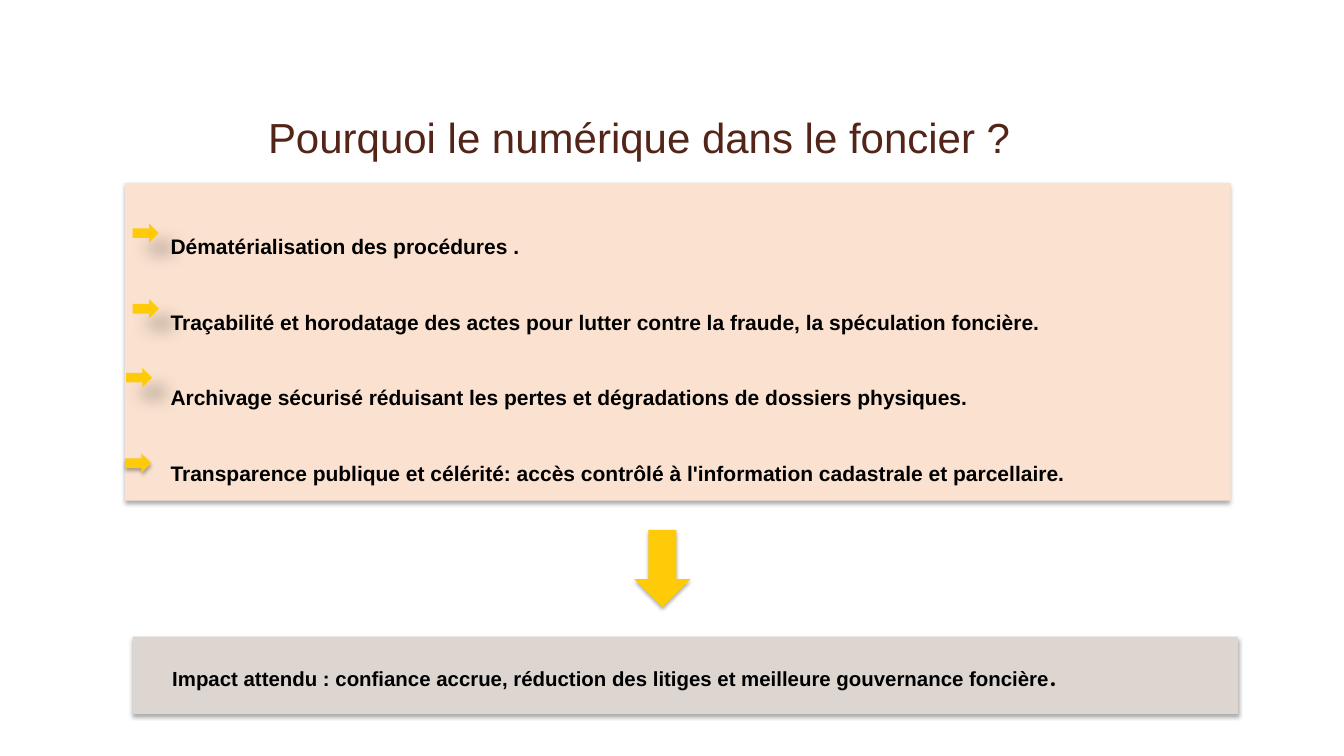
from lxml.etree import SubElement
from pptx import Presentation
from pptx.dml.color import RGBColor
from pptx.enum.shapes import MSO_SHAPE
from pptx.enum.text import MSO_ANCHOR, MSO_AUTO_SIZE, PP_ALIGN
from pptx.oxml.ns import qn
from pptx.util import Inches, Pt

TITLE = "Pourquoi le numérique dans le foncier ?"
REASONS = [
    "Dématérialisation des procédures .",
    "Traçabilité et horodatage des actes pour lutter contre la fraude, la spéculation foncière.",
    "Archivage sécurisé réduisant les pertes et dégradations de dossiers physiques.",
    "Transparence publique et célérité: accès contrôlé à l'information cadastrale et parcellaire.",
]
IMPACT = [
    ("Impact attendu\u00a0: confiance accrue, réduction des litiges et meilleure gouvernance foncière", "Arial"),
    (".", "Montserrat"),
]
COLORS = {"title": "532418", "text": "000000", "panel": "FBE2D0",
          "impact": "DCD5D0", "arrow": "FFCA08", "shade": "000000"}
NEAR = {"alpha": 32, "blur": 3.5, "dist": 2.2, "angle": 90}
FAR = {"alpha": 30, "blur": 15, "dist": 18, "angle": 45}

# percent of slide width and height
AREAS = {
    "title": (19.94, 13.22, 62.94, 7),
    "panel": (9.31, 24.22, 82.25, 42),
    "impact": (9.88, 84.22, 82.25, 10.22),
    "down": (47.19, 70.11, 4.19, 10.22),
}
MARKS = [(9.88, 29.56, FAR), (9.88, 39.56, FAR), (9.38, 48.67, FAR), (9.31, 60, NEAR)]
MARK = (1.94, 2.56)

deck = Presentation()
deck.slide_width, deck.slide_height = Inches(16), Inches(9)
slide = deck.slides.add_slide(deck.slide_layouts[1])


def scale(area):
    sides = (deck.slide_width, deck.slide_height) * 2
    return [round(part * side / 100) for part, side in zip(area, sides)]


def place(shape, area):
    shape.left, shape.top, shape.width, shape.height = scale(area)


def paint(shape, color, shade):
    shape.fill.solid()
    shape.fill.fore_color.rgb = RGBColor.from_string(COLORS[color])
    shape.line.fill.background()
    shape.shadow.inherit = False
    effects = shape._element.spPr.find(qn("a:effectLst"))
    outer = SubElement(effects, qn("a:outerShdw"), {
        "blurRad": str(Pt(shade["blur"])), "dist": str(Pt(shade["dist"])),
        "dir": str(shade["angle"] * 60000), "algn": "ctr", "rotWithShape": "0"})
    tone = SubElement(outer, qn("a:srgbClr"), val=COLORS["shade"])
    SubElement(tone, qn("a:alpha"), val=str(shade["alpha"] * 1000))


def draw(kind, area, color, shade):
    shape = slide.shapes.add_shape(kind, *scale(area))
    paint(shape, color, shade)
    return shape


def frame(shape, left=0, top=0):
    box = shape.text_frame
    box.margin_left, box.margin_top = Inches(left), Inches(top)
    box.margin_right = box.margin_bottom = 0
    box.word_wrap = True
    box.auto_size = MSO_AUTO_SIZE.NONE
    box.vertical_anchor = MSO_ANCHOR.TOP
    return box


def style(para, size, pitch, color, bold, face="Arial"):
    para.alignment = PP_ALIGN.LEFT
    para.line_spacing = Pt(pitch)
    para.space_before = para.space_after = Pt(0)
    font = para.font
    font.size, font.bold = Pt(size), bold
    font.color.rgb = RGBColor.from_string(COLORS[color])
    if face:
        font.name = face


title = slide.shapes.title
place(title, AREAS["title"])
head = frame(title)
head.text = TITLE
style(head.paragraphs[0], 36, 53, "title", False)

panel = slide.placeholders[1]
place(panel, AREAS["panel"])
paint(panel, "panel", NEAR)
body = frame(panel, 0.54)
body.text = "\n".join(REASONS)
for para in body.paragraphs:
    props = para._p.get_or_add_pPr()
    props.set("marL", "0")
    props.set("indent", "0")
    SubElement(props, qn("a:buNone"))
    style(para, 18, 64.8, "text", True)

impact = draw(MSO_SHAPE.RECTANGLE, AREAS["impact"], "impact", NEAR)
line = frame(impact, 0.47, 0.32).paragraphs[0]
for text, face in IMPACT:
    run = line.add_run()
    run.text = text
    run.font.name = face
style(line, 17.5, 23, "text", True, None)

draw(MSO_SHAPE.DOWN_ARROW, AREAS["down"], "arrow", NEAR)
for left, top, shade in MARKS:
    draw(MSO_SHAPE.RIGHT_ARROW, (left, top, *MARK), "arrow", shade)

deck.save("out.pptx")
